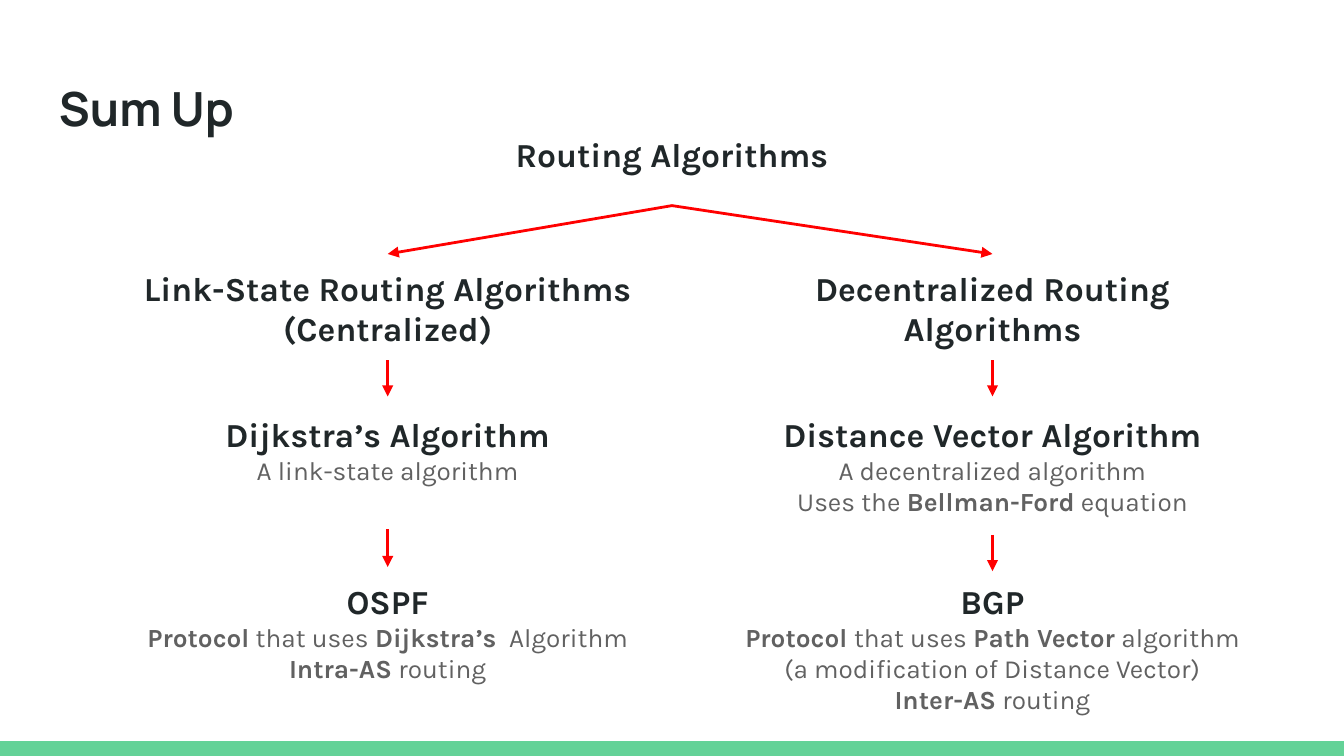
from copy import deepcopy
from dataclasses import dataclass

from lxml.etree import SubElement
from pptx import Presentation
from pptx.dml.color import RGBColor
from pptx.enum.shapes import MSO_CONNECTOR, MSO_SHAPE
from pptx.enum.text import MSO_ANCHOR, PP_ALIGN
from pptx.oxml.ns import qn
from pptx.util import Inches, Pt


@dataclass(frozen=True)
class Theme:
    heading: RGBColor = RGBColor.from_string("202729")
    detail: RGBColor = RGBColor.from_string("616161")
    arrow: RGBColor = RGBColor.from_string("FF0000")
    footer: RGBColor = RGBColor.from_string("63D297")
    background: RGBColor = RGBColor.from_string("FFFFFF")
    title_font: str = "Manrope"
    body_font: str = "Karla"
    title_size: float = 25.2
    heading_size: float = 18
    detail_size: float = 14
    arrow_width: float = 1.5


theme = Theme()
SLIDE_WIDTH = 10
SLIDE_HEIGHT = SLIDE_WIDTH * 9 / 16
FOOTER_HEIGHT = 0.11
COLUMN_WIDTH = 4.13
LEFT, RIGHT = 0.82, 5.32
LEFT_CENTER, RIGHT_CENTER = LEFT + COLUMN_WIDTH / 2, RIGHT + COLUMN_WIDTH / 2

presentation = Presentation()
presentation.slide_width = Inches(SLIDE_WIDTH)
presentation.slide_height = Inches(SLIDE_HEIGHT)
slide = presentation.slides.add_slide(presentation.slide_layouts[6])
slide.background.fill.solid()
slide.background.fill.fore_color.rgb = theme.background


def add_text(left, top, width, height, heading, details=(), is_title=False):
    """Add a bold heading and detail paragraphs; ** toggles bold in details."""
    box = slide.shapes.add_textbox(Inches(left), Inches(top), Inches(width), Inches(height))
    frame = box.text_frame
    frame.word_wrap = True
    frame.vertical_anchor = MSO_ANCHOR.MIDDLE if is_title else MSO_ANCHOR.TOP
    frame.margin_left = frame.margin_right = Inches(0.1)
    frame.margin_top = frame.margin_bottom = Inches(0.1)
    for row, text in enumerate((f"**{heading}**", *details)):
        paragraph = frame.add_paragraph() if row else frame.paragraphs[0]
        paragraph.alignment = PP_ALIGN.LEFT if is_title else PP_ALIGN.CENTER
        for part, chunk in enumerate(text.split("**")):
            for line_number, line in enumerate(chunk.split("\n")):
                if line_number:
                    # The break takes the size of the run before it
                    paragraph.add_line_break()
                    paragraph._p[-1].append(deepcopy(run._r.rPr))
                if not line:
                    continue
                run = paragraph.add_run()
                run.text = line
                font = run.font
                font.bold = part % 2 == 1
                font.name = theme.title_font if is_title else theme.body_font
                font.size = Pt(theme.title_size if is_title else
                               theme.detail_size if row else theme.heading_size)
                font.color.rgb = theme.detail if row else theme.heading
    return box


footer = slide.shapes.add_shape(
    MSO_SHAPE.RECTANGLE, 0, Inches(SLIDE_HEIGHT - FOOTER_HEIGHT),
    Inches(SLIDE_WIDTH), Inches(FOOTER_HEIGHT))
footer.shadow.inherit = False
footer.fill.solid()
footer.fill.fore_color.rgb = theme.footer
footer.line.fill.background()

add_text(0.34, 0.49, 9.32, 0.63, "Sum Up", is_title=True)
root = add_text(3.52, 0.9, 2.96, 0.63, "Routing Algorithms")

link_state = add_text(LEFT, 1.89, COLUMN_WIDTH, 0.63,
                      "Link-State Routing Algorithms\n(Centralized)")
decentralized = add_text(RIGHT, 1.89, COLUMN_WIDTH, 0.63,
                         "Decentralized Routing Algorithms")
add_text(LEFT, 2.98, COLUMN_WIDTH, 0.63, "Dijkstra’s Algorithm",
         ["A link-state algorithm"])
add_text(RIGHT, 2.98, COLUMN_WIDTH, 0.97, "Distance Vector Algorithm",
         ["A decentralized algorithm", "Uses the **Bellman-Ford** equation"])
ospf = add_text(LEFT, 4.22, COLUMN_WIDTH, 0.87, "OSPF",
                ["**Protocol** that uses **Dijkstra’s**  Algorithm",
                 "**Intra-AS** routing"])
add_text(RIGHT, 4.22, COLUMN_WIDTH, 0.87, "BGP",
         ["**Protocol **that uses **Path Vector** algorithm\n"
          "(a modification of Distance Vector)",
          "**Inter-AS** routing"])

# Start x, start y, end x, end y, box joined at its bottom, box joined at its top
arrows = [
    (5, 1.53, LEFT_CENTER, 1.89, root, link_state),
    (5, 1.53, RIGHT_CENTER, 1.89, root, decentralized),
    (LEFT_CENTER, 2.68, LEFT_CENTER, 2.95, None, None),
    (RIGHT_CENTER, 2.68, RIGHT_CENTER, 2.95, None, None),
    (LEFT_CENTER, 3.94, LEFT_CENTER, 4.22, None, ospf),
    (RIGHT_CENTER, 3.98, RIGHT_CENTER, 4.25, None, None),
]
for start_x, start_y, end_x, end_y, source, target in arrows:
    arrow = slide.shapes.add_connector(
        MSO_CONNECTOR.STRAIGHT,
        Inches(start_x), Inches(start_y), Inches(end_x), Inches(end_y))
    if source is not None:
        arrow.begin_connect(source, 2)
    if target is not None:
        arrow.end_connect(target, 0)
    arrow.line.color.rgb = theme.arrow
    arrow.line.width = Pt(theme.arrow_width)
    properties = arrow._element.spPr
    SubElement(properties.find(qn("a:ln")), qn("a:tailEnd"), type="triangle")
    SubElement(properties, qn("a:effectLst"))

presentation.save("out.pptx")
